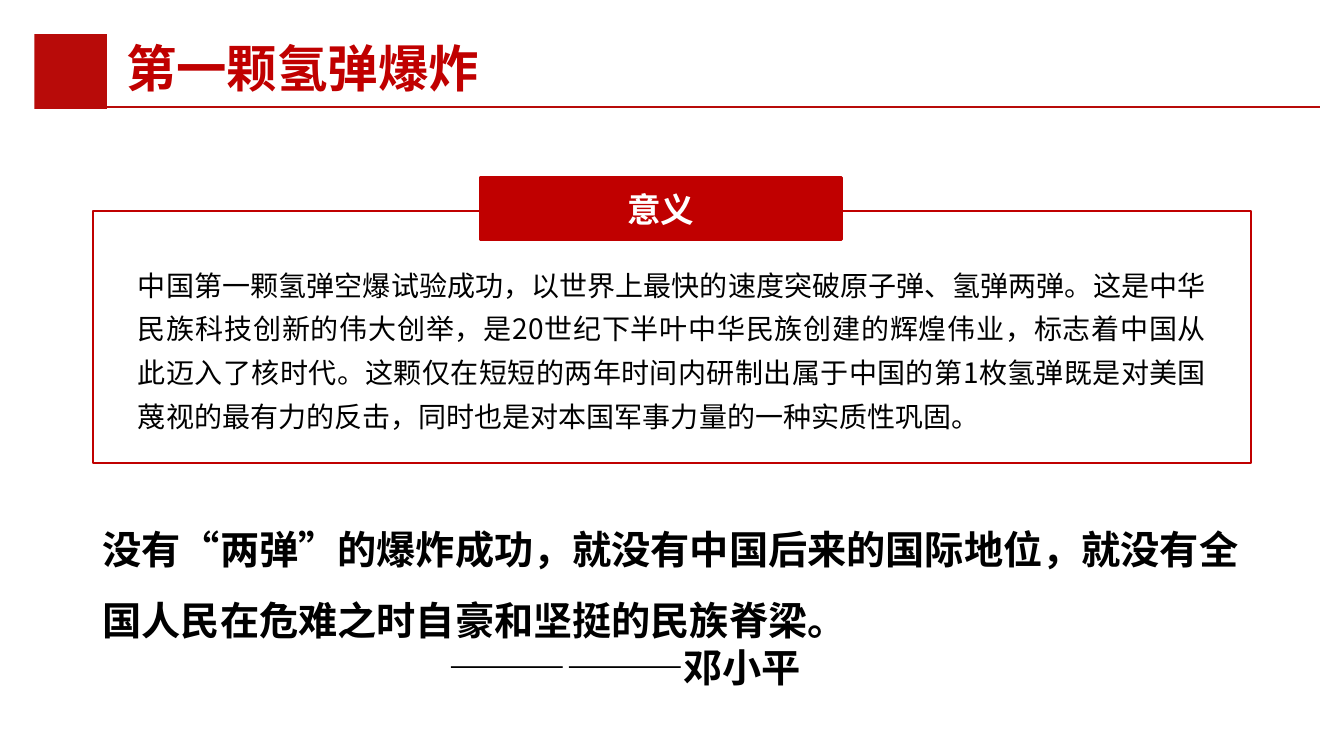
from dataclasses import dataclass, field
from typing import Optional

from lxml.etree import SubElement
from pptx import Presentation
from pptx.dml.color import RGBColor
from pptx.enum.shapes import MSO_CONNECTOR, MSO_SHAPE
from pptx.enum.text import MSO_ANCHOR as Anchor, MSO_AUTO_SIZE as AutoSize, PP_ALIGN as Align
from pptx.oxml.ns import qn
from pptx.util import Inches, Pt

FONT = "Noto Sans CJK SC"
COLORS = {"red": "C00000", "brand": "B80B09", "black": "000000", "white": "FFFFFF"}


@dataclass
class Para:
    """A paragraph with its font and paragraph formats."""
    text: str
    size: int
    color: str = "black"
    bold: bool = False
    fmt: dict = field(default_factory=dict)
    indent: float = 0


@dataclass
class Box:
    """A rectangle or text box, placed in inches."""
    at: tuple
    paras: tuple = ()
    fill: Optional[str] = None
    line: Optional[str] = None
    width: float = 1.5


TITLE = Box((1.15, 0.32, 4.79, 0.71),
            (Para("第一颗氢弹爆炸", 36, "red", True, {"alignment": Align.LEFT}),))
MARK = Box((0.34, 0.34, 0.72, 0.74), fill="brand")
FRAME = Box((0.92, 2.09, 11.49, 2.5), line="red")
MEANING = Box((1.27, 2.51, 10.79, 2.21), (Para(
    "中国第一颗氢弹空爆试验成功，以世界上最快的速度突破原子弹、氢弹两弹。"
    "这是中华民族科技创新的伟大创举，是20世纪下半叶中华民族创建的辉煌伟业，"
    "标志着中国从此迈入了核时代。这颗仅在短短的两年时间内研制出属于中国的第1枚氢弹"
    "既是对美国蔑视的最有力的反击，同时也是对本国军事力量的一种实质性巩固。",
    20, fmt={"alignment": Align.JUSTIFY, "line_spacing": 1.3}),))
LABEL = Box((4.76, 1.76, 3.59, 0.62),
            (Para("意义", 24, "white", True, {"alignment": Align.CENTER}),),
            "red", "red", 2)
QUOTE = Box((0.92, 4.93, 11.49, 1.99), (
    Para("没有“两弹”的爆炸成功，就没有中国后来的国际地位，"
         "就没有全国人民在危难之时自豪和坚挺的民族脊梁。",
         28, bold=True, fmt={"line_spacing": 1.5}),
    Para("——————邓小平", 28, bold=True, indent=3.43)))


def rgb(name: str) -> RGBColor:
    """Look up a named colour."""
    return RGBColor.from_string(COLORS[name])


def write(tf, paras: tuple, anchor=Anchor.TOP) -> None:
    """Fill a text frame with formatted paragraphs."""
    frame = {"word_wrap": True, "auto_size": AutoSize.NONE, "vertical_anchor": anchor}
    for key, value in frame.items():
        setattr(tf, key, value)
    for i, para in enumerate(paras):
        p = tf.add_paragraph() if i else tf.paragraphs[0]
        for key, value in para.fmt.items():
            setattr(p, key, value)
        if para.indent:
            p._p.get_or_add_pPr().set("marL", str(Inches(para.indent)))
        r = p.add_run()
        r.text = para.text
        font = {"name": FONT, "size": Pt(para.size), "bold": para.bold}
        for key, value in font.items():
            setattr(r.font, key, value)
        r.font.color.rgb = rgb(para.color)
        SubElement(r._r.get_or_add_rPr(), qn("a:ea")).set("typeface", FONT)


def add_rect(s, box: Box) -> None:
    """Draw a rectangle with an optional fill, outline and label."""
    sp = s.shapes.add_shape(MSO_SHAPE.RECTANGLE, *map(Inches, box.at))
    sp.shadow.inherit = False
    if box.fill:
        sp.fill.solid()
        sp.fill.fore_color.rgb = rgb(box.fill)
    else:
        sp.fill.background()
    if box.line:
        sp.line.color.rgb = rgb(box.line)
        sp.line.width = Pt(box.width)
    else:
        sp.line.fill.background()
    write(sp.text_frame, box.paras, Anchor.MIDDLE)


def add_text(s, box: Box) -> None:
    """Add a text box."""
    sp = s.shapes.add_textbox(*map(Inches, box.at))
    write(sp.text_frame, box.paras)


def add_title(s, box: Box) -> None:
    """Move and fill the title placeholder."""
    sp = s.shapes.title
    for key, value in zip(("left", "top", "width", "height"), box.at):
        setattr(sp, key, Inches(value))
    write(sp.text_frame, box.paras)


def add_rule(s) -> None:
    """Draw the line under the title."""
    line = s.shapes.add_connector(
        MSO_CONNECTOR.STRAIGHT, *map(Inches, (1.06, 1.06, 13.09, 1.06)))
    line.line.color.rgb = rgb("brand")
    line.line.width = Pt(1.5)
    SubElement(line._element.spPr, qn("a:effectLst"))


def main() -> None:
    """Build and save the slide."""
    prs = Presentation()
    prs.slide_width, prs.slide_height = Inches(13.33), Inches(7.5)
    s = prs.slides.add_slide(prs.slide_layouts[5])
    add_rect(s, MARK)
    add_rule(s)
    add_title(s, TITLE)
    add_rect(s, FRAME)
    add_text(s, MEANING)
    add_rect(s, LABEL)
    add_text(s, QUOTE)
    prs.save("out.pptx")


if __name__ == "__main__":
    main()
